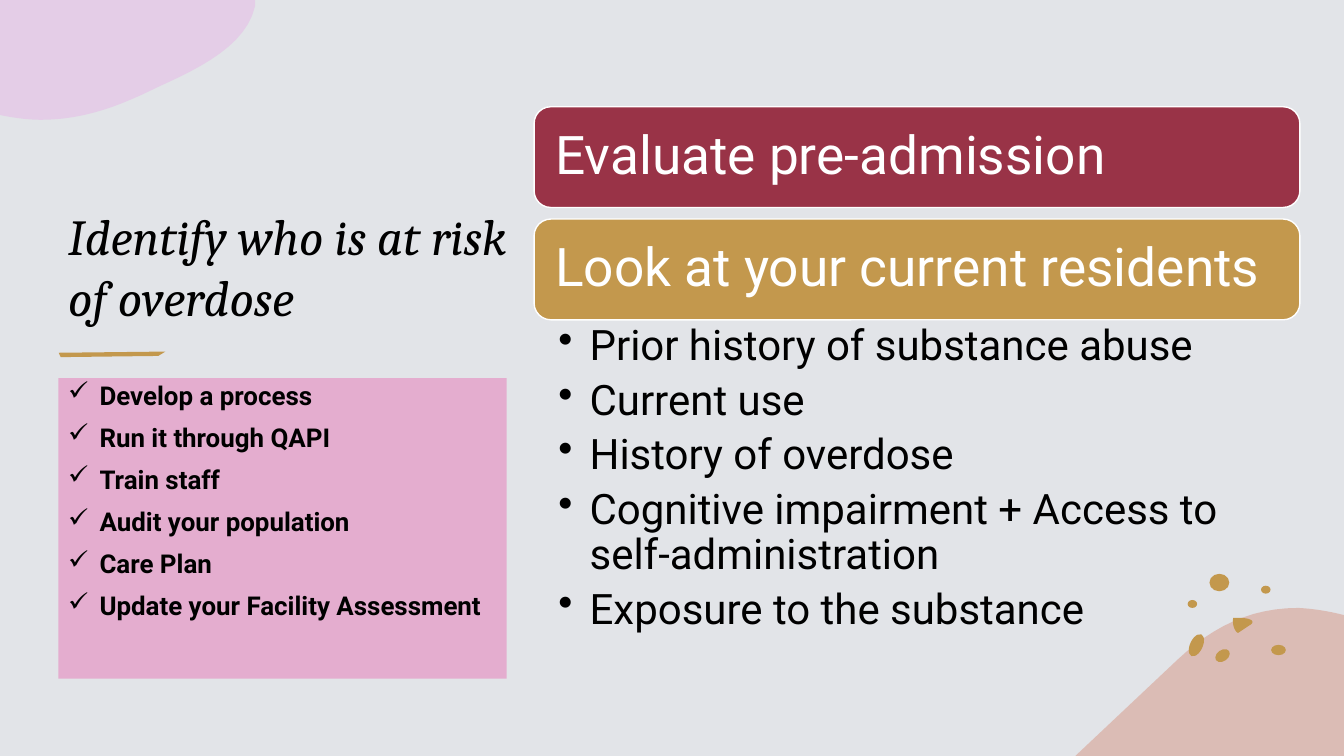
from dataclasses import dataclass

from lxml import etree
from pptx import Presentation, util as u
from pptx.dml.color import RGBColor
from pptx.enum import shapes, text
from pptx.oxml.ns import qn

COLORS = {
    "background": "E2E4E8", "lilac": "E6B8E7", "clay": "D69684", "gold": "C3984D",
    "wine": "993347", "pink": "E4ADCF", "white": "FFFFFF", "black": "000000",
}
CURVE_STEPS = 12
HANGING_INDENT = u.Cm(0.79)


@dataclass
class Outline:
    """Closed outline in cm; a segment is x, y for a line or six numbers for a cubic curve."""
    color: str
    start: tuple[float, float]
    segments: list[tuple[float, ...]]
    opacity: int = 100


@dataclass
class Box:
    left: float
    top: float
    width: float
    height: float

    def lengths(self) -> list[u.Length]:
        return [u.Cm(value) for value in (self.left, self.top, self.width, self.height)]


@dataclass
class Speck:
    center_x: float
    center_y: float
    width: float
    height: float
    rotation: int = 0

    def box(self) -> Box:
        return Box(self.center_x - self.width / 2, self.center_y - self.height / 2,
                   self.width, self.height)


@dataclass
class TextStyle:
    font: str
    size: float
    color: str = "black"
    bold: bool = False
    italic: bool = False
    bullet: str = ""
    line_spacing: float = 0.9
    before: float = 0
    after: float = 0
    anchor: text.MSO_ANCHOR = text.MSO_ANCHOR.TOP
    side_margin: float = 0.25
    end_margin: float = 0.13


@dataclass
class Banner:
    wording: str
    color: str


CLAY_BLOB = Outline("clay", (27.1, 19.05), [
    (29.69, 16.61), (30.56, 15.8, 31.5, 15.32, 32.72, 15.32),
    (33.1, 15.34, 33.48, 15.4, 33.87, 15.5), (33.87, 19.05)], 50)
LILAC_BLOB = Outline("lilac", (0, 0), [
    (6.43, 0), (6.43, 0.15), (6.22, 1.12, 5.08, 1.7, 4.01, 2.18),
    (3.12, 2.62, 2.18, 3.02, 1.04, 3.02), (0.7, 3.02, 0.35, 2.97, 0, 2.9)], 50)
GOLD_WEDGE = Outline("gold", (31.08, 15.57), [
    (31.5, 15.55, 31.7, 15.65, 31.47, 15.77), (31.2, 15.95), (31.1, 15.9, 31.05, 15.7, 31.08, 15.57)])
TITLE_UNDERLINE = Outline("gold", (1.48, 8.89), [(4.17, 8.86), (3.99, 8.97), (1.53, 9)])
GOLD_SPECKS = [
    Speck(30.73, 14.68, 0.5, 0.44), Speck(31.9, 14.86, 0.24, 0.2),
    Speck(30.05, 15.22, 0.24, 0.2), Speck(30.15, 16.26, 0.32, 0.6, 25),
    Speck(30.81, 16.52, 0.4, 0.28, -35), Speck(32.22, 16.38, 0.37, 0.26),
]

TITLE = "Identify who is at risk of overdose"
BANNERS = [Banner("Evaluate pre-admission", "wine"),
           Banner("Look at your current residents", "gold")]
RISK_FACTORS = [
    "Prior history of substance abuse", "Current use", "History of overdose",
    "Cognitive impairment + Access to self-administration", "Exposure to the substance",
]
ACTIONS = ["Develop a process", "Run it through QAPI", "Train staff",
           "Audit your population", "Care Plan", "Update your Facility Assessment"]

TITLE_BOX = Box(1.47, 2.18, 11.99, 6.17)
RISK_BOX = Box(13.46, 8.05, 19.3, 8.31)
ACTION_BOX = Box(1.47, 9.53, 11.3, 7.57)
BANNER_TOP, BANNER_PITCH, BANNER_HEIGHT = 2.69, 2.83, 2.54

TITLE_STYLE = TextStyle("Cambria", 36, italic=True, line_spacing=1,
                        anchor=text.MSO_ANCHOR.BOTTOM)
BANNER_STYLE = TextStyle("Roboto", 38, "white", anchor=text.MSO_ANCHOR.MIDDLE,
                         side_margin=0.41, end_margin=0.41)
RISK_STYLE = TextStyle("Roboto", 30, bullet="•", after=6.5, side_margin=0.61)
ACTION_STYLE = TextStyle("Roboto", 18.5, bold=True, bullet="✓", before=10)


def rgb(name: str) -> RGBColor:
    return RGBColor.from_string(COLORS[name])


def paint(shape, color: str, line: str = "") -> None:
    shape.shadow.inherit = False
    shape.fill.solid()
    shape.fill.fore_color.rgb = rgb(color)
    if line:
        shape.line.color.rgb = rgb(line)
        shape.line.width = u.Pt(1)
    else:
        shape.line.fill.background()


def trace(outline: Outline) -> list[tuple[float, ...]]:
    """Turn the segments of an outline into a run of points."""
    points = [outline.start]
    for segment in outline.segments:
        if len(segment) == 2:
            points.append(segment)
            continue
        controls = [points[-1], segment[:2], segment[2:4], segment[4:]]
        for step in range(1, CURVE_STEPS + 1):
            t = step / CURVE_STEPS
            weights = ((1 - t) ** 3, 3 * t * (1 - t) ** 2, 3 * t * t * (1 - t), t ** 3)
            points.append(tuple(sum(w * c[axis] for w, c in zip(weights, controls))
                                for axis in (0, 1)))
    return points


def draw_outline(slide, outline: Outline) -> None:
    points = [(u.Cm(x), u.Cm(y)) for x, y in trace(outline)]
    builder = slide.shapes.build_freeform(*points[0])
    builder.add_line_segments(points[1:], close=True)
    shape = builder.convert_to_shape()
    paint(shape, outline.color)
    if outline.opacity < 100:
        color = shape.element.spPr.find(qn("a:solidFill"))[0]
        etree.SubElement(color, qn("a:alpha"), val=str(outline.opacity * 1000))


def draw_shape(slide, preset: shapes.MSO_SHAPE, box: Box, color: str, line: str = ""):
    shape = slide.shapes.add_shape(preset, *box.lengths())
    paint(shape, color, line)
    return shape


def add_bullet(paragraph, character: str) -> None:
    properties = paragraph._p.get_or_add_pPr()
    properties.set("marL", str(HANGING_INDENT))
    properties.set("indent", str(-HANGING_INDENT))
    etree.SubElement(properties, qn("a:buChar"), char=character)


def write(shape, lines: list[str], style: TextStyle) -> None:
    frame = shape.text_frame
    frame.word_wrap = True
    frame.vertical_anchor = style.anchor
    frame.margin_left = frame.margin_right = u.Cm(style.side_margin)
    frame.margin_top = frame.margin_bottom = u.Cm(style.end_margin)
    frame.text = "\n".join(lines)
    for paragraph in frame.paragraphs:
        paragraph.alignment = text.PP_ALIGN.LEFT
        paragraph.line_spacing = style.line_spacing
        paragraph.space_before = u.Pt(style.before)
        paragraph.space_after = u.Pt(style.after)
        if style.bullet:
            add_bullet(paragraph, style.bullet)
        font = paragraph.font
        font.name, font.size = style.font, u.Pt(style.size)
        font.bold, font.italic = style.bold, style.italic
        font.color.rgb = rgb(style.color)


def main() -> None:
    presentation = Presentation()
    presentation.slide_width, presentation.slide_height = u.Cm(33.87), u.Cm(19.05)
    slide = presentation.slides.add_slide(presentation.slide_layouts[6])
    slide.background.fill.solid()
    slide.background.fill.fore_color.rgb = rgb("background")

    for outline in (CLAY_BLOB, LILAC_BLOB, GOLD_WEDGE, TITLE_UNDERLINE):
        draw_outline(slide, outline)
    for speck in GOLD_SPECKS:
        draw_shape(slide, shapes.MSO_SHAPE.OVAL, speck.box(), "gold").rotation = speck.rotation

    write(slide.shapes.add_textbox(*TITLE_BOX.lengths()), [TITLE], TITLE_STYLE)
    for row, banner in enumerate(BANNERS):
        box = Box(RISK_BOX.left, BANNER_TOP + row * BANNER_PITCH, RISK_BOX.width, BANNER_HEIGHT)
        shape = draw_shape(slide, shapes.MSO_SHAPE.ROUNDED_RECTANGLE, box, banner.color, "white")
        write(shape, [banner.wording], BANNER_STYLE)
    write(slide.shapes.add_textbox(*RISK_BOX.lengths()), RISK_FACTORS, RISK_STYLE)
    panel = draw_shape(slide, shapes.MSO_SHAPE.RECTANGLE, ACTION_BOX, "pink")
    write(panel, ACTIONS, ACTION_STYLE)
    presentation.save("out.pptx")


if __name__ == "__main__":
    main()
